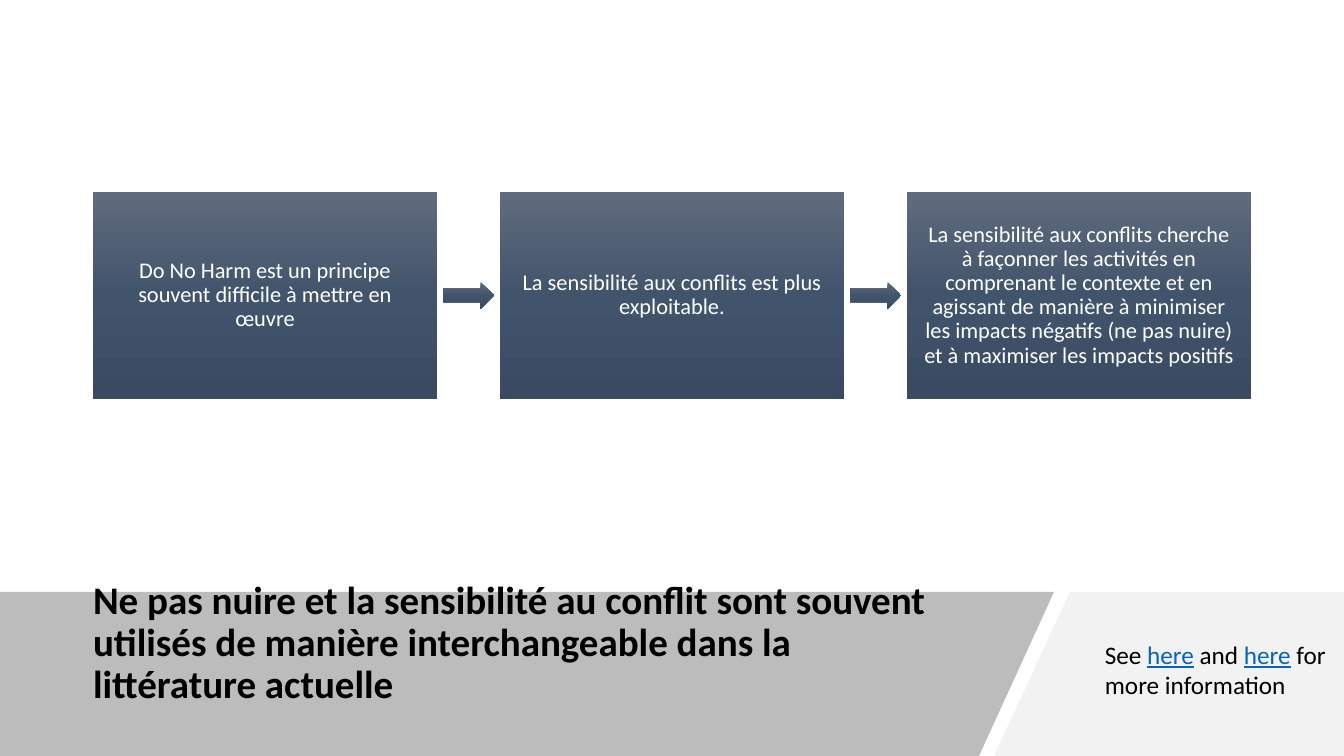
import copy

import lxml.etree
import pptx
import pptx.dml.color
import pptx.enum.shapes
import pptx.enum.text
import pptx.oxml.ns
import pptx.util

RGBColor = pptx.dml.color.RGBColor
SHAPES = pptx.enum.shapes.MSO_SHAPE
qn = pptx.oxml.ns.qn

SLIDE_WIDTH, SLIDE_HEIGHT = 1344, 756
EMU_PER_PX = 12192000 / SLIDE_WIDTH

FONT = "Calibri"
BLACK = RGBColor(0x00, 0x00, 0x00)
WHITE = RGBColor(0xFF, 0xFF, 0xFF)
LINK_BLUE = RGBColor(0x05, 0x63, 0xC1)
BAND_GREY = RGBColor(0x59, 0x59, 0x59)
CORNER_GREY = RGBColor(0xF2, 0xF2, 0xF2)
SLATE_STOPS = (
    (0, RGBColor(0x60, 0x6B, 0x7D)),
    (0.5, RGBColor(0x42, 0x54, 0x6C)),
    (1, RGBColor(0x39, 0x4A, 0x62)),
)

BAND_TOP = 592
STEP_LEFT, STEP_TOP, STEP_WIDTH, STEP_HEIGHT = 93, 192, 344, 207
STEP_PITCH = 407
ARROW_GAP, ARROW_TOP, ARROW_WIDTH, ARROW_HEIGHT = 6, 282, 51, 27

TITLE = (
    "Ne pas nuire et la sensibilité au conflit sont souvent utilisés "
    "de manière interchangeable dans la littérature actuelle"
)
STEPS = (
    "Do No Harm est un principe souvent difficile à mettre en œuvre",
    "La sensibilité aux conflits est plus exploitable.",
    "La sensibilité aux conflits cherche à façonner les activités en "
    "comprenant le contexte et en agissant de manière à minimiser les impacts "
    "négatifs (ne pas nuire) et à maximiser les impacts positifs",
)
NOTE_RUNS = (
    ("See ", False),
    ("here", True),
    (" and ", False),
    ("here", True),
    (" for more information", False),
)


def px(length):
    return pptx.util.Emu(round(length * EMU_PER_PX))


def add_run(paragraph, text, size, color, bold=False, underline=False):
    run = paragraph.add_run()
    run.text = text
    run.font.name = FONT
    run.font.size = pptx.util.Pt(size)
    run.font.color.rgb = color
    run.font.bold = bold
    run.font.underline = underline


def add_polygon(slide, points, color, opacity=100):
    builder = slide.shapes.build_freeform(*points[0], scale=EMU_PER_PX)
    builder.add_line_segments(points[1:], close=True)
    shape = builder.convert_to_shape()
    shape.shadow.inherit = False
    shape.line.fill.background()
    shape.fill.solid()
    shape.fill.fore_color.rgb = color
    if opacity < 100:
        color_element = shape._element.spPr.find(qn("a:solidFill"))[0]
        alpha = lxml.etree.SubElement(color_element, qn("a:alpha"))
        alpha.set("val", str(opacity * 1000))


def add_slate_shape(slide, kind, left, top, width, height):
    shape = slide.shapes.add_shape(kind, px(left), px(top), px(width), px(height))
    shape.shadow.inherit = False
    shape.line.fill.background()
    shape.fill.gradient()
    shape.fill.gradient_angle = 270
    stop_list = shape._element.spPr.find(qn("a:gradFill")).find(qn("a:gsLst"))
    stop_list.append(copy.deepcopy(stop_list[0]))
    for stop, (position, color) in zip(shape.fill.gradient_stops, SLATE_STOPS):
        stop.position = position
        stop.color.rgb = color
    return shape


def add_step(slide, left, text):
    shape = add_slate_shape(
        slide, SHAPES.RECTANGLE, left, STEP_TOP, STEP_WIDTH, STEP_HEIGHT
    )
    frame = shape.text_frame
    frame.word_wrap = True
    frame.vertical_anchor = pptx.enum.text.MSO_ANCHOR.MIDDLE
    frame.margin_left = frame.margin_right = px(17)
    frame.margin_top = frame.margin_bottom = px(17)
    paragraph = frame.paragraphs[0]
    paragraph.alignment = pptx.enum.text.PP_ALIGN.CENTER
    paragraph.line_spacing = 0.9
    add_run(paragraph, text, 16, WHITE)


def add_steps(slide):
    for index, text in enumerate(STEPS):
        left = STEP_LEFT + index * STEP_PITCH
        add_step(slide, left, text)
        if index < len(STEPS) - 1:
            arrow_left = left + STEP_WIDTH + ARROW_GAP
            add_slate_shape(
                slide, SHAPES.RIGHT_ARROW,
                arrow_left, ARROW_TOP, ARROW_WIDTH, ARROW_HEIGHT,
            )


def fill_title(slide):
    title = slide.shapes.title
    title.left, title.top = px(83), px(610)
    title.width, title.height = px(890), px(121)
    frame = title.text_frame
    frame.word_wrap = True
    frame.auto_size = pptx.enum.text.MSO_AUTO_SIZE.NONE
    frame.vertical_anchor = pptx.enum.text.MSO_ANCHOR.BOTTOM
    frame.margin_bottom = px(24)
    paragraph = frame.paragraphs[0]
    paragraph.alignment = pptx.enum.text.PP_ALIGN.LEFT
    paragraph.line_spacing = 0.9
    add_run(paragraph, TITLE, 27.9, BLACK, bold=True)


def add_note(slide):
    box = slide.shapes.add_textbox(px(1095), px(634), px(249), px(72))
    frame = box.text_frame
    frame.word_wrap = True
    for text, is_link in NOTE_RUNS:
        color = LINK_BLUE if is_link else BLACK
        add_run(frame.paragraphs[0], text, 18, color, underline=is_link)


def main():
    presentation = pptx.Presentation()
    presentation.slide_width = px(SLIDE_WIDTH)
    presentation.slide_height = px(SLIDE_HEIGHT)
    slide = presentation.slides.add_slide(presentation.slide_layouts[5])
    corner = (
        (1070, BAND_TOP), (SLIDE_WIDTH, BAND_TOP),
        (SLIDE_WIDTH, SLIDE_HEIGHT), (994, SLIDE_HEIGHT),
    )
    band = (
        (0, BAND_TOP), (1054, BAND_TOP),
        (979, SLIDE_HEIGHT), (0, SLIDE_HEIGHT),
    )
    add_polygon(slide, corner, CORNER_GREY)
    add_polygon(slide, band, BAND_GREY, opacity=40)
    title_element = slide.shapes.title._element
    title_element.getparent().append(title_element)
    fill_title(slide)
    add_steps(slide)
    add_note(slide)
    presentation.save("out.pptx")


if __name__ == "__main__":
    main()
